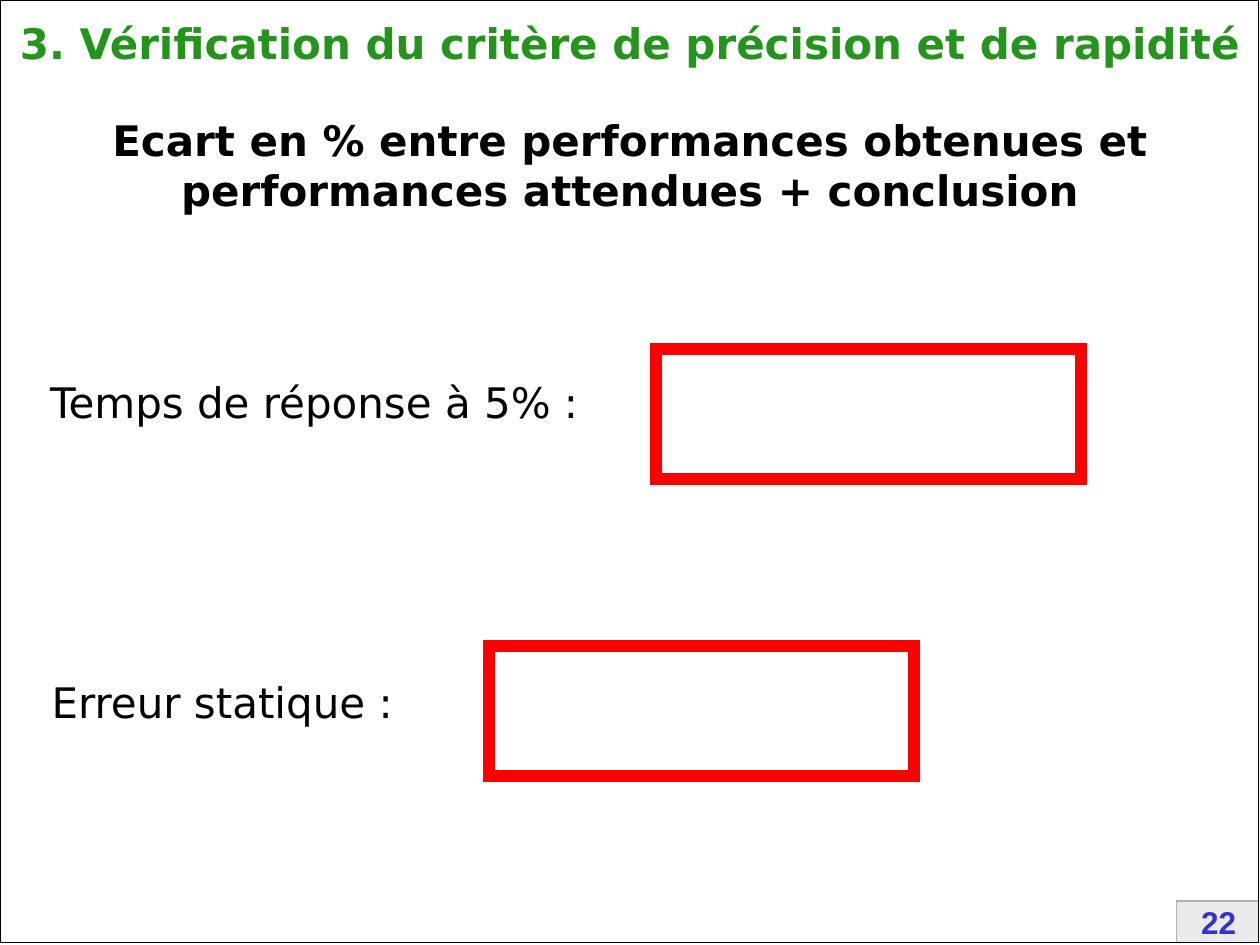
from lxml import etree
from pptx import Presentation
from pptx.dml.color import RGBColor
from pptx.enum.shapes import MSO_SHAPE
from pptx.enum.text import MSO_ANCHOR, PP_ALIGN
from pptx.oxml.ns import qn
from pptx.util import Cm, Pt

RECT = MSO_SHAPE.RECTANGLE
TOP, MID = MSO_ANCHOR.TOP, MSO_ANCHOR.MIDDLE
LEFT, MIDDLE = PP_ALIGN.LEFT, PP_ALIGN.CENTER

HUES = {
    "green": "25941C", "black": "000000", "red": "FF0000", "blue": "3333CC",
    "pale": "EAEAEA", "grey": "B2B2B2", "white": "FFFFFF",
}


def style(shape, fill=None, line=None, width=1):
    shape.shadow.inherit = False
    if fill:
        shape.fill.solid()
        shape.fill.fore_color.rgb = RGBColor.from_string(HUES[fill])
    else:
        shape.fill.background()
    if line:
        shape.line.color.rgb = RGBColor.from_string(HUES[line])
        shape.line.width = Pt(width)
        # Square corners
        edge = shape.line._get_or_add_ln()
        etree.SubElement(edge, qn("a:miter"), lim="800000")
    else:
        shape.line.fill.background()


def write(text, box, hue, align=MIDDLE, anchor=MID, bold=False,
          face="DejaVu Sans", size=24):
    frame = slide.shapes.add_textbox(*map(Cm, box)).text_frame
    frame.word_wrap = True
    frame.vertical_anchor = anchor
    par = frame.paragraphs[0]
    par.text = text
    par.alignment = align
    par.font.name = face
    par.font.size = Pt(size)
    par.font.bold = bold
    par.font.color.rgb = RGBColor.from_string(HUES[hue])


deck = Presentation()
deck.slide_width, deck.slide_height = Cm(25.4), Cm(19.05)
slide = deck.slides.add_slide(deck.slide_layouts[6])

# Page number badge with bevelled edges
badge = slide.shapes.add_shape(RECT, Cm(23.72), Cm(18.16), Cm(1.65), Cm(0.85))
style(badge, fill="pale")
bevels = [
    ("grey", [(25.38, 18.16), (23.72, 18.16), (23.72, 19.02)]),
    ("white", [(25.4, 18.16), (25.4, 19.02), (23.75, 19.02)]),
]
for hue, points in bevels:
    start, *rest = [(Cm(x), Cm(y)) for x, y in points]
    path = slide.shapes.build_freeform(*start)
    path.add_line_segments(rest, close=False)
    style(path.convert_to_shape(), line=hue)
write("22", (23.83, 18.08, 1.47, 1.02), "blue", anchor=TOP, bold=True,
      face="Arial", size=18)

# Page border
border = slide.shapes.add_shape(RECT, 0, 0, Cm(25.37), Cm(19))
style(border, line="black")

# Headings
write("3. Vérification du critère de précision et de rapidité",
      (0, 0.23, 25.4, 1.27), "green", anchor=TOP, bold=True)
write("Ecart en % entre performances obtenues et performances attendues"
      " + conclusion", (0, 2.18, 25.4, 2.29), "black", bold=True)

# Criteria, each with an answer frame
criteria = [
    ("Temps de réponse à 5% :", (0.76, 7.47, 12.09, 1.27), (13.23, 7.04)),
    ("Erreur statique :", (0.79, 13.51, 11.38, 1.27), (9.86, 13.02)),
]
for text, box, (x, y) in criteria:
    write(text, box, "black", align=LEFT)
    answer = slide.shapes.add_shape(RECT, Cm(x), Cm(y), Cm(8.56), Cm(2.62))
    style(answer, line="red", width=7)

deck.save("out.pptx")
